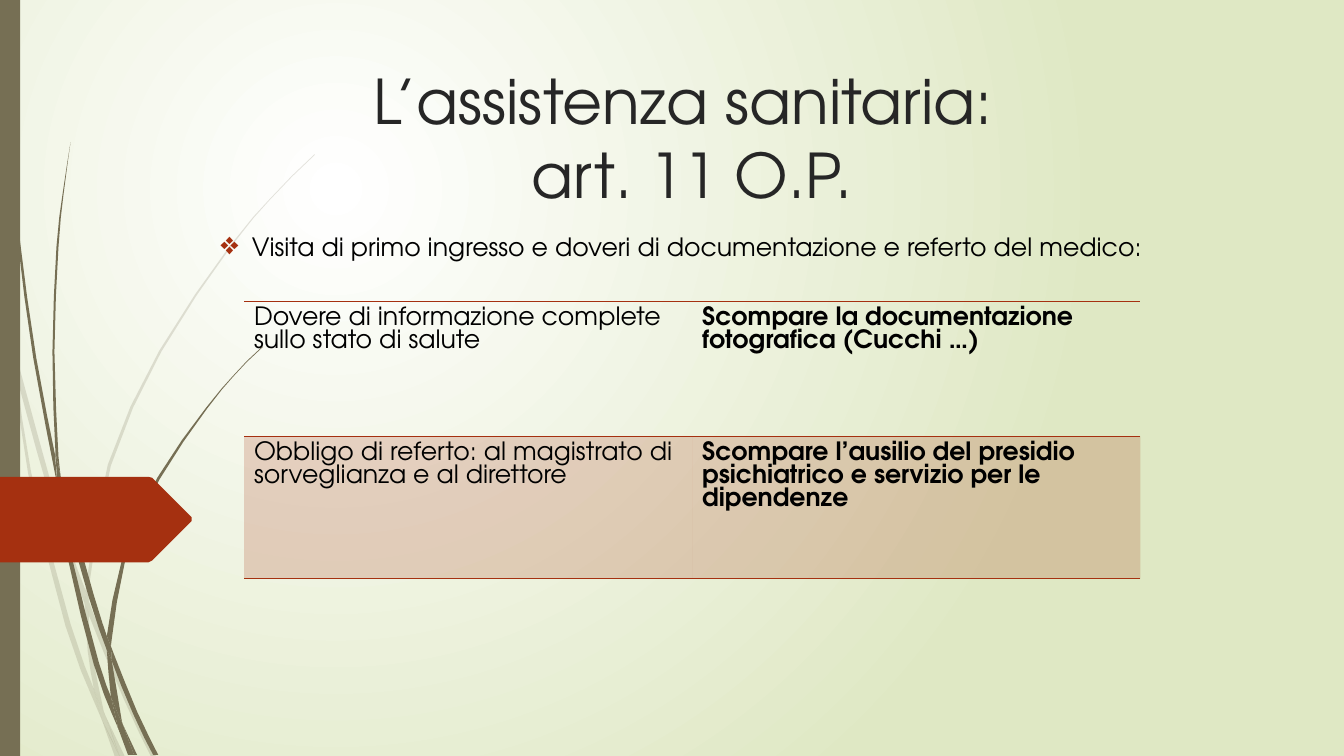
from lxml.etree import SubElement as add_node
from pptx import Presentation
from pptx.dml.color import RGBColor as Rgb
from pptx.enum.shapes import MSO_SHAPE as Shape
from pptx.enum.text import MSO_ANCHOR as Anchor, PP_ALIGN as Align
from pptx.oxml.ns import qn
from pptx.util import Inches, Pt

COLORS = {"white": "FFFFFF", "lime": "DFE8C4", "olive": "766F54",
          "rust": "A53010", "dark": "262626", "black": "000000"}
FONT = "TeX Gyre Adventor"
BARE = "{2D5ABB26-0587-4C30-8999-92F81FD0307C}"
TITLE = "L’assistenza sanitaria: \vart. 11 O.P."
INTRO = "Visita di primo ingresso e doveri di documentazione e referto del medico:"
ROWS = [
    ["Dovere di informazione complete sullo stato di salute",
     "Scompare la documentazione fotografica (Cucchi …)"],
    ["Obbligo di referto: al magistrato di sorveglianza e al direttore",
     "Scompare l’ausilio del presidio psichiatrico e servizio per le dipendenze"],
]
HEIGHTS = [1.34, 1.41]

PALE = [
    ([(0.11, 3.5), (0.09, 3.22), (0, 2.82)], [(0, 2.99), (0.1, 3.44)]),
    ([(0.14, 3.45), (0.62, 5.2), (0.85, 5.86)],
     [(0.84, 5.99), (0.58, 5.22), (0.17, 3.76)]),
    ([(0.88, 5.96), (0.92, 6.07), (1.27, 6.92), (1.55, 7.51)],
     [(1.5, 7.51), (1.23, 6.94), (0.88, 6.1)]),
    ([(1.05, 7.11), (1.24, 7.51)], [(1.19, 7.51)]),
    ([(0.11, 3.5), (0.17, 3.76), (0.31, 4.69), (0.7, 6.19), (0.93, 6.83)],
     [(0.99, 7.07), (1.01, 7.14), (0.92, 6.93), (0.65, 6.21), (0.28, 4.7)]),
    ([(0.84, 5.99), (0.87, 6.46), (0.93, 6.83), (0.96, 6.92), (1.05, 7.11)],
     [(1.03, 7.06), (0.91, 6.46), (0.88, 6.1), (0.88, 6.08)]),
    ([(0.88, 5.84), (1.1, 4.62), (1.6, 3.49), (2.29, 2.45), (2.68, 1.98),
      (2.9, 1.75), (3.12, 1.54)],
     [(3.12, 1.53), (2.89, 1.75), (2.68, 1.97), (2.28, 2.44), (1.58, 3.48),
      (1.07, 4.61), (0.85, 5.84), (0.85, 5.86), (0.88, 5.96)]),
    ([(1.01, 7.14), (1.14, 7.51)], [(1.19, 7.51)]),
    ([(0.84, 5.99), (0.85, 5.86)], [(0.88, 5.96), (0.88, 6.1), (0.88, 6.08)]),
    ([(0.93, 6.83), (0.96, 6.92), (1.05, 7.11), (1.19, 7.51)],
     [(1.01, 7.14), (0.99, 7.07)]),
]
DARK = [
    ([(0.04, 0), (0.05, 0.48), (0.08, 1.09), (0.19, 2.32), (0.36, 3.55),
      (0.55, 4.53), (0.55, 4.57)],
     [(0.57, 4.81), (0.56, 4.77), (0.33, 3.55), (0.17, 2.33), (0.07, 1.1),
      (0.04, 0.48), (0.03, 0)]),
    ([(0.6, 4.72), (0.93, 5.9), (1.06, 6.31)],
     [(1.06, 6.33), (1.06, 6.45), (0.88, 5.92), (0.64, 5.05)]),
    ([(1.1, 6.41), (1.13, 6.49), (1.36, 7.06), (1.57, 7.49)],
     [(1.52, 7.49), (1.32, 7.08), (1.11, 6.56)]),
    ([(0.57, 4.77), (0.64, 5.05), (0.72, 5.56), (0.98, 6.57), (1.1, 6.91)],
     [(1.16, 7.17), (1.17, 7.22), (1.11, 7.08), (0.93, 6.59), (0.68, 5.57)]),
    ([(0.6, 4.72), (0.58, 4.53), (0.54, 3.49), (0.58, 2.45), (0.63, 1.93),
      (0.7, 1.41)],
     [(0.62, 1.93), (0.56, 2.45), (0.52, 3.49), (0.55, 4.49)]),
    ([(1.22, 7.19), (1.36, 7.49)], [(1.33, 7.49)]),
    ([(0.55, 4.49), (0.6, 4.72), (0.64, 5.05)], [(0.57, 4.77), (0.55, 4.53)]),
    ([(1.11, 6.33), (1.25, 5.52), (1.58, 4.76), (2.05, 4.06), (2.31, 3.74),
      (2.45, 3.59), (2.61, 3.44)],
     [(2.6, 3.44), (2.45, 3.58), (2.31, 3.73), (2.04, 4.05), (1.56, 4.74),
      (1.22, 5.51), (1.06, 6.31), (1.1, 6.41)]),
    ([(1.17, 7.22), (1.31, 7.49)], [(1.27, 7.49)]),
    ([(1.06, 6.45), (1.1, 6.91), (1.16, 7.06), (1.22, 7.19)],
     [(1.21, 7.16), (1.11, 6.56), (1.09, 6.51)]),
    ([(1.06, 6.31), (1.1, 6.41), (1.11, 6.56)], [(1.09, 6.51), (1.06, 6.45)]),
    ([(1.1, 6.91), (1.16, 7.06), (1.22, 7.19), (1.33, 7.49)],
     [(1.3, 7.49), (1.17, 7.22), (1.16, 7.17)]),
]
ARROW = [(0, 4.73), (1.47, 4.73), (1.51, 4.74), (1.9, 5.13), (1.9, 5.17),
         (1.51, 5.56), (1.47, 5.58), (0, 5.58)]


def color(name):
    """Return the named colour."""
    return Rgb.from_string(COLORS[name])


def paint(fill, name, alpha=100):
    """Fill solidly, with an opacity in percent."""
    fill.solid()
    fill.fore_color.rgb = color(name)
    if alpha < 100:
        tone = fill._xPr.find(".//" + qn("a:srgbClr"))
        add_node(tone, qn("a:alpha"), val=str(alpha * 1000))


def finish(shape, name, alpha=100):
    """Give a shape a plain fill without line or shadow."""
    paint(shape.fill, name, alpha)
    shape.line.fill.background()
    shape.shadow.inherit = False


def smooth(edge):
    """Add a Catmull-Rom midpoint to each long step of an edge."""
    pts = [edge[0], *edge, edge[-1]]
    curve = [edge[0]]
    for a, b, c, d in zip(pts, pts[1:], pts[2:], pts[3:]):
        if abs(c[1] - b[1]) > 0.3:
            curve.append(tuple((9 * (q + r) - p - s) / 16
                               for p, q, r, s in zip(a, b, c, d)))
        curve.append(c)
    return curve


def add_form(shapes, points, name, alpha=100):
    """Draw a closed outline."""
    start, *rest = [(Inches(x), Inches(y)) for x, y in points]
    pen = shapes.build_freeform(*start)
    pen.add_line_segments(rest, close=True)
    finish(pen.convert_to_shape(), name, alpha)


def add_grass(slide, blades, alpha=100):
    """Draw a group of curved blades."""
    shapes = slide.shapes.add_group_shape().shapes
    for out, back in blades:
        points = smooth(out) + smooth([out[-1], *back, out[0]])[1:-1]
        add_form(shapes, points, "olive", alpha)


def write(frame, text, size, name="black", bold=False):
    """Write text and return its paragraph."""
    frame.word_wrap = True
    para = frame.paragraphs[0]
    para.text = text
    style = {"name": FONT, "size": Pt(size), "bold": bold}
    for run in para.runs:
        for key, value in style.items():
            setattr(run.font, key, value)
        run.font.color.rgb = color(name)
    return para


def add_text(slide, box, *args):
    """Add a text box and return its frame and paragraph."""
    frame = slide.shapes.add_textbox(*map(Inches, box)).text_frame
    return frame, write(frame, *args)


def add_bullet(para, char, name):
    """Put a coloured bullet with a hanging indent on a paragraph."""
    props = para._p.get_or_add_pPr()
    props.set("marL", str(Inches(0.31)))
    props.set("indent", str(-Inches(0.31)))
    tone = add_node(props, qn("a:buClr"))
    add_node(tone, qn("a:srgbClr"), val=COLORS[name])
    add_node(props, qn("a:buSzPct"), val="125000")
    add_node(props, qn("a:buChar"), char=char)


def add_rules(cell):
    """Rule a cell above and below, ahead of its fill."""
    props = cell._tc.get_or_add_tcPr()
    for spot, side in enumerate("LRTB"):
        line = add_node(props, qn("a:ln" + side), w=str(Pt(1)))
        props.insert(spot, line)
        if side in "LR":
            add_node(line, qn("a:noFill"))
        else:
            fill = add_node(line, qn("a:solidFill"))
            add_node(fill, qn("a:srgbClr"), val=COLORS["rust"])


def add_grid(slide):
    """Add the table of duties and gaps."""
    box = map(Inches, (2.42, 2.99, 8.89, sum(HEIGHTS)))
    table = slide.shapes.add_table(2, 2, *box).table
    table.first_row = table.horz_banding = False
    table._tbl.find(".//" + qn("a:tableStyleId")).text = BARE
    for i, texts in enumerate(ROWS):
        table.rows[i].height = Inches(HEIGHTS[i])
        for j, text in enumerate(texts):
            cell = table.cell(i, j)
            write(cell.text_frame, text, 18, "black", j == 1)
            if i:
                paint(cell.fill, "rust", 20)
            else:
                cell.fill.background()
            add_rules(cell)


def add_glow(slide):
    """Fill the background with a round gradient."""
    fill = slide.background.fill
    fill.gradient()
    for stop, name in zip(fill.gradient_stops, ("white", "lime")):
        stop.color.rgb = color(name)
    line = slide._element.find(".//" + qn("a:lin"))
    grad = line.getparent()
    grad.remove(line)
    ring = add_node(grad, qn("a:path"), {"path": "circle"})
    add_node(ring, qn("a:fillToRect"), l="50000", t="50000", r="100000", b="100000")


def main():
    """Build the slide and save it."""
    deck = Presentation()
    deck.slide_width, deck.slide_height = Inches(13.33), Inches(7.5)
    slide = deck.slides.add_slide(deck.slide_layouts[6])
    add_glow(slide)
    add_grass(slide, PALE, 20)
    add_grass(slide, DARK)
    bar = slide.shapes.add_shape(Shape.RECTANGLE, 0, 0, Inches(0.2), Inches(7.5))
    finish(bar, "olive")
    add_form(slide.shapes, ARROW, "rust")
    frame, para = add_text(slide, (1.99, 0.42, 9.75, 1.72), TITLE, 44, "dark")
    frame.vertical_anchor = Anchor.BOTTOM
    para.alignment = Align.CENTER
    frame, para = add_text(slide, (2.09, 2.25, 10.45, 4.83), INTRO, 18)
    para.space_before = Pt(10)
    add_bullet(para, "❖", "rust")
    add_grid(slide)
    deck.save("out.pptx")


if __name__ == "__main__":
    main()
